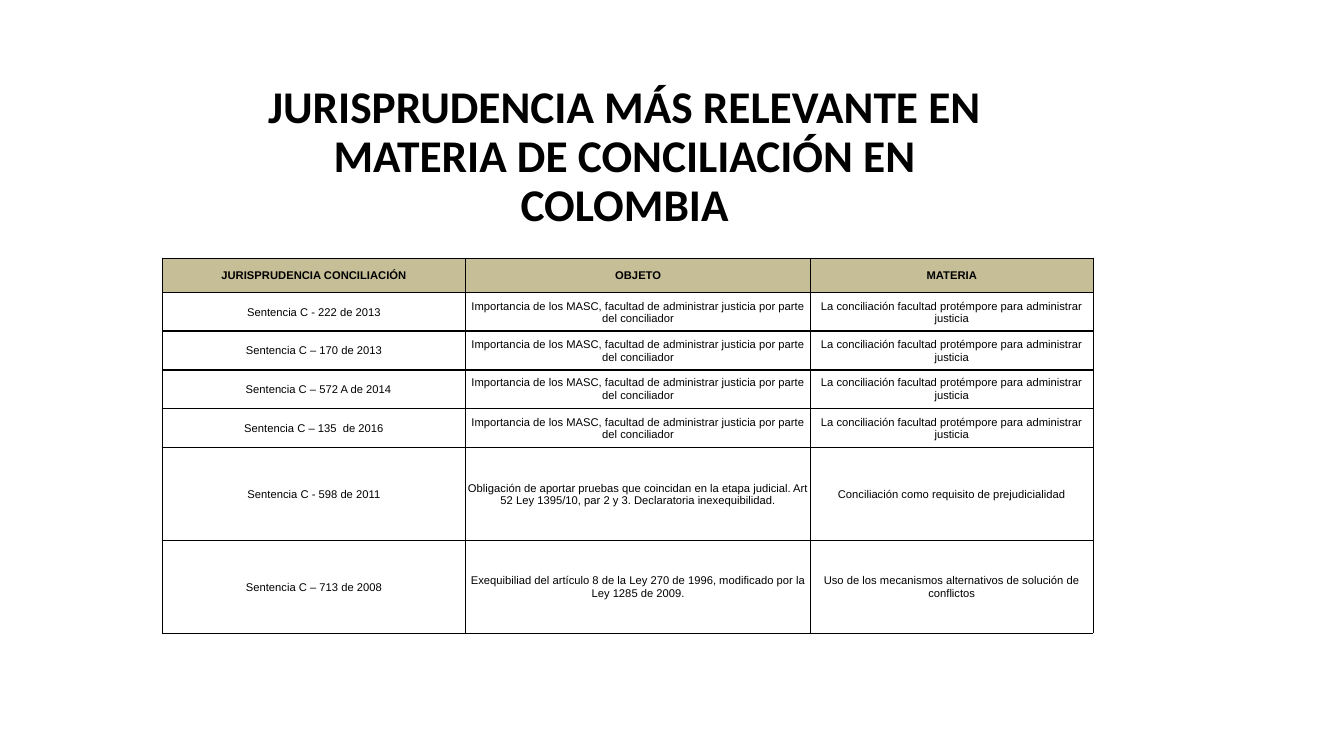
"""Build the slide on conciliation case law in Colombia."""
from dataclasses import dataclass

from lxml import etree
from pptx import Presentation
from pptx import util as u
from pptx.dml.color import RGBColor
from pptx.enum import text
from pptx.oxml import ns

PX = 9144


@dataclass(frozen=True)
class Theme:
    ink: str = "000000"
    header_fill: str = "C5BE97"
    title_font: str = "Calibri"
    table_font: str = "Arial"
    title_size: float = 32.4
    table_size: float = 8
    border_width: float = 0.5


def write(frame, wording, *, font, size, color, bold=False, spacing=1.0):
    frame.word_wrap = True
    paragraph = frame.paragraphs[0]
    paragraph.alignment = text.PP_ALIGN.CENTER
    paragraph.line_spacing = spacing
    run = paragraph.add_run()
    run.text = wording
    run.font.name = font
    run.font.size = u.Pt(size)
    run.font.bold = bold
    run.font.color.rgb = RGBColor.from_string(color)


class Deck:
    def __init__(self, theme, width, height):
        self.theme = theme
        self.presentation = Presentation()
        self.presentation.slide_width = width * PX
        self.presentation.slide_height = height * PX
        self.slide = self.presentation.slides.add_slide(self.presentation.slide_layouts[6])

    def title(self, wording, left, top, width, height):
        box = self.slide.shapes.add_textbox(left * PX, top * PX, width * PX, height * PX)
        box.text_frame.vertical_anchor = text.MSO_ANCHOR.MIDDLE
        write(box.text_frame, wording, font=self.theme.title_font, size=self.theme.title_size,
              color=self.theme.ink, bold=True, spacing=0.9)

    def border(self, cell):
        properties = cell._tc.get_or_add_tcPr()
        for side in ("a:lnL", "a:lnR", "a:lnT", "a:lnB"):
            line = etree.SubElement(properties, ns.qn(side), w=str(u.Pt(self.theme.border_width)))
            fill = etree.SubElement(line, ns.qn("a:solidFill"))
            etree.SubElement(fill, ns.qn("a:srgbClr"), val=self.theme.ink)

    def cell(self, cell, wording, header, indent):
        self.border(cell)
        if header:
            cell.fill.solid()
            cell.fill.fore_color.rgb = RGBColor.from_string(self.theme.header_fill)
        else:
            cell.fill.background()
        cell.margin_left = (1 + indent) * PX
        cell.margin_right = cell.margin_top = PX
        cell.margin_bottom = 0
        cell.vertical_anchor = text.MSO_ANCHOR.MIDDLE
        write(cell.text_frame, wording, font=self.theme.table_font, size=self.theme.table_size,
              color=self.theme.ink, bold=header)

    def table(self, rows, left, top, widths, heights, has_header=False, indent=0):
        table = self.slide.shapes.add_table(
            len(rows), len(widths), left * PX, top * PX, sum(widths) * PX, sum(heights) * PX).table
        table.first_row = has_header
        table.horz_banding = False
        for column, width in zip(table.columns, widths):
            column.width = width * PX
        for index, (row, height) in enumerate(zip(rows, heights)):
            table.rows[index].height = height * PX
            for position, wording in enumerate(row):
                self.cell(table.cell(index, position), wording, has_header and index == 0,
                          indent if position == 0 else 0)

    def save(self):
        self.presentation.save("out.pptx")


def main():
    deck = Deck(Theme(), 1333, 750)
    deck.title("JURISPRUDENCIA MÁS RELEVANTE EN MATERIA DE CONCILIACIÓN EN COLOMBIA",
               251, 107, 737, 99)

    left, widths = 161, (301, 342, 280)
    headings = ("JURISPRUDENCIA CONCILIACIÓN", "OBJETO", "MATERIA")
    masc = ("Importancia de los MASC, facultad de administrar justicia por parte del conciliador",
            "La conciliación facultad protémpore para administrar justicia")
    deck.table([headings, ("Sentencia C - 222 de 2013", *masc)],
               left, 256, widths, (34, 39), has_header=True)

    rulings = [
        (328, 39, 0, ("Sentencia C – 170 de 2013", *masc)),
        (366, 39, 9, ("Sentencia C – 572 A de 2014", *masc)),
        (405, 39, 0, ("Sentencia C – 135  de 2016", *masc)),
        (444, 92, 0, ("Sentencia C - 598 de 2011",
                      "Obligación de aportar pruebas que coincidan en la etapa judicial. "
                      "Art 52 Ley 1395/10, par 2 y 3. Declaratoria inexequibilidad.",
                      "Conciliación como requisito de prejudicialidad")),
        (536, 92, 0, ("Sentencia C – 713 de 2008",
                      "Exequibiliad del artículo 8 de la Ley 270 de 1996, "
                      "modificado por la Ley 1285 de 2009.",
                      "Uso de los mecanismos alternativos de solución de conflictos")),
    ]
    for top, height, indent, ruling in rulings:
        deck.table([ruling], left, top, widths, (height,), indent=indent)
    deck.save()


if __name__ == "__main__":
    main()
